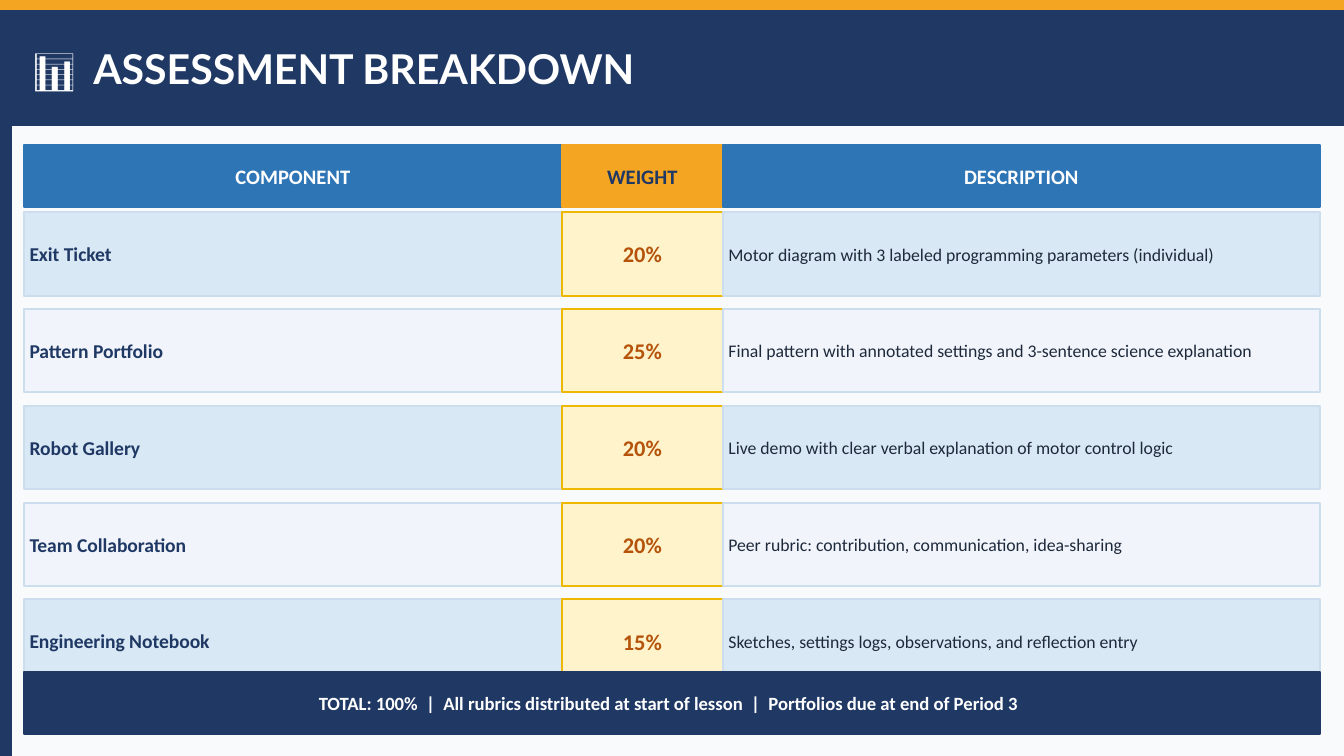
from pptx import Presentation
from pptx.dml.color import RGBColor
from pptx.enum.shapes import MSO_SHAPE
from pptx.enum.text import MSO_ANCHOR, PP_ALIGN
from pptx.util import Inches, Pt

WIDTH = 10
HEIGHT = WIDTH * 9 / 16
NAVY, BLUE, ORANGE, WHITE = "1F3864", "2E75B6", "F4A522", "FFFFFF"
STRIPES = ("D9E8F5", "F1F5FB")

# Grid: left edge and width of each column, then the row measures
EDGE = 0.08
COMPONENT, WEIGHT, DESCRIPTION = (0.18, 4), (4.18, 1.2), (5.38, 4.44)
HEADER_TOP, BAR_HEIGHT = 1.08, 0.46
FIRST_ROW, ROW_STEP, ROW_HEIGHT = 1.58, 0.72, 0.62
TOTAL_TOP = 5
TEXT_INDENT = 0.04

HEADERS = [
    (COMPONENT, "COMPONENT", BLUE, WHITE),
    (WEIGHT, "WEIGHT", ORANGE, NAVY),
    (DESCRIPTION, "DESCRIPTION", BLUE, WHITE),
]
ASSESSMENTS = [
    ("Exit Ticket", "20%",
     "Motor diagram with 3 labeled programming parameters (individual)"),
    ("Pattern Portfolio", "25%",
     "Final pattern with annotated settings and 3-sentence science explanation"),
    ("Robot Gallery", "20%",
     "Live demo with clear verbal explanation of motor control logic"),
    ("Team Collaboration", "20%",
     "Peer rubric: contribution, communication, idea-sharing"),
    ("Engineering Notebook", "15%",
     "Sketches, settings logs, observations, and reflection entry"),
]


def color(hex_string):
    return RGBColor.from_string(hex_string)


def add_panel(page, left, top, width, height, fill, line=None):
    panel = page.shapes.add_shape(
        MSO_SHAPE.RECTANGLE, *map(Inches, (left, top, width, height)))
    panel.shadow.inherit = False
    panel.fill.solid()
    panel.fill.fore_color.rgb = color(fill)
    panel.line.color.rgb = color(line or fill)
    panel.line.width = Pt(1)


def add_text(page, text, left, top, width, height, *, size, ink,
             font="Calibri", bold=True, align=PP_ALIGN.LEFT):
    box = page.shapes.add_textbox(*map(Inches, (left, top, width, height)))
    frame = box.text_frame
    frame.word_wrap = True
    frame.vertical_anchor = MSO_ANCHOR.MIDDLE
    frame.margin_left = frame.margin_right = 0
    frame.margin_top = frame.margin_bottom = 0
    para = frame.paragraphs[0]
    para.alignment = align
    span = para.add_run()
    span.text = text
    span.font.name = font
    span.font.size = Pt(size)
    span.font.bold = bold
    span.font.color.rgb = color(ink)


def add_title(page, text):
    add_panel(page, 0, 0, WIDTH, EDGE, ORANGE)
    add_panel(page, 0, EDGE, EDGE, HEIGHT - EDGE, NAVY)
    add_panel(page, EDGE, EDGE, WIDTH - EDGE, 0.85, NAVY)
    add_text(page, text, 0.25, EDGE, 9.5, 0.85, size=22, ink=WHITE, font="Lato")


def add_header(page):
    for (left, width), label, fill, ink in HEADERS:
        area = (left, HEADER_TOP, width, BAR_HEIGHT)
        add_panel(page, *area, fill)
        add_text(page, label, *area, size=11, ink=ink, align=PP_ALIGN.CENTER)


def add_row(page, index, name, weight, description):
    top = FIRST_ROW + index * ROW_STEP
    stripe = STRIPES[index % 2]
    cells = [
        (COMPONENT, name, stripe, "CCDDEE", TEXT_INDENT, 3.9,
         dict(size=10.5, ink=NAVY)),
        (WEIGHT, weight, "FFF3CC", "EEB800", 0, 1.2,
         dict(size=12, ink="B45309", align=PP_ALIGN.CENTER)),
        (DESCRIPTION, description, stripe, "CCDDEE", TEXT_INDENT, 4.3,
         dict(size=9.5, ink="1E293B", bold=False)),
    ]
    for (left, width), text, fill, line, indent, text_width, style in cells:
        add_panel(page, left, top, width, ROW_HEIGHT, fill, line)
        add_text(page, text, left + indent, top, text_width, ROW_HEIGHT, **style)


def add_total(page, text):
    left = COMPONENT[0]
    width = sum(DESCRIPTION) - left
    add_panel(page, left, TOTAL_TOP, width, BAR_HEIGHT, NAVY)
    add_text(page, text, left + TEXT_INDENT, TOTAL_TOP, 9.5, BAR_HEIGHT,
             size=10, ink=WHITE, align=PP_ALIGN.CENTER)


def main():
    deck = Presentation()
    deck.slide_width, deck.slide_height = Inches(WIDTH), Inches(HEIGHT)
    page = deck.slides.add_slide(deck.slide_layouts[6])
    page.background.fill.solid()
    page.background.fill.fore_color.rgb = color("F8FAFC")

    # Title band and frame
    add_title(page, "📊  ASSESSMENT BREAKDOWN")

    # Assessment grid
    add_header(page)
    for index, assessment in enumerate(ASSESSMENTS):
        add_row(page, index, *assessment)

    # Total bar, over the foot of the last row
    add_total(page, "TOTAL: 100%  |  All rubrics distributed at start of lesson"
                    "  |  Portfolios due at end of Period 3")

    deck.save("out.pptx")


if __name__ == "__main__":
    main()
